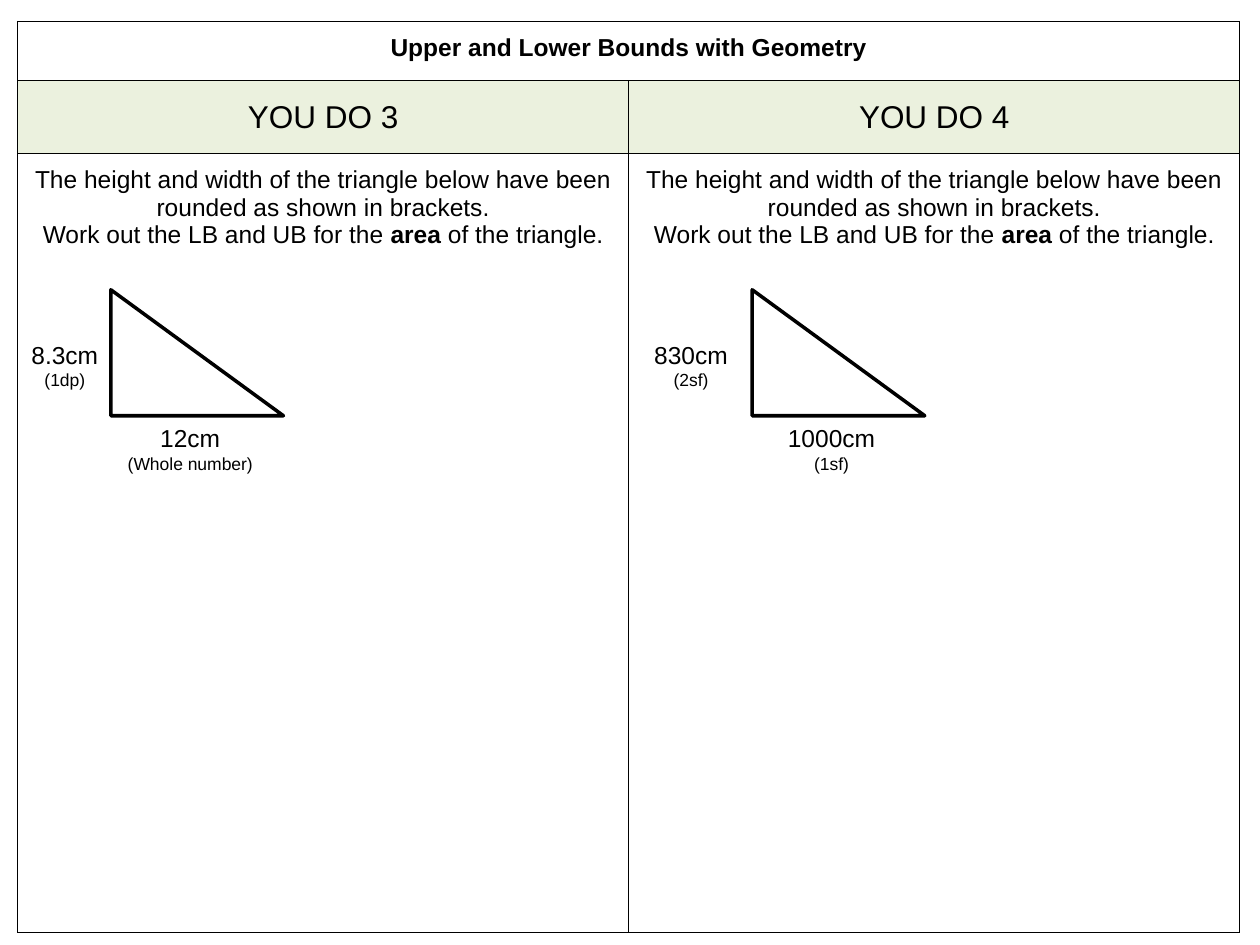
from lxml.etree import SubElement
from pptx import Presentation
from pptx.dml.color import RGBColor
from pptx.enum.shapes import MSO_SHAPE
from pptx.enum.text import MSO_ANCHOR, MSO_AUTO_SIZE, PP_ALIGN
from pptx.oxml.ns import qn
from pptx.util import Inches, Pt

# Content: a paragraph is a list of (text, bold) runs
TITLE = "Upper and Lower Bounds with Geometry"
QUESTION = [
    [("The height and width of the triangle below have been rounded as shown in brackets.", False)],
    [("Work out the LB and UB for the ", False), ("area", True), (" of the triangle.", False)],
]
# Each side is (length, rounding, label width); left is the triangle's position
TASKS = [
    {"heading": "YOU DO 3", "left": 0.88,
     "height": ("8.3cm", "(1dp)", 0.73), "base": ("12cm", "(Whole number)", 1.2)},
    {"heading": "YOU DO 4", "left": 5.97,
     "height": ("830cm", "(2sf)", 0.97), "base": ("1000cm", "(1sf)", 0.9)},
]

THEME = {
    "font": "Arial", "ink": "000000", "heading_fill": "EBF1DE",
    "heading": 18, "body": 14, "rounding": 10,
    "border": 0.75, "outline": 2,
}

# Layout in inches
TABLE_LEFT, TABLE_TOP, COLUMN_WIDTH = 0.14, 0.17, 4.85
ROW_HEIGHTS = [0.47, 0.58, 6.18]
CELL_MARGIN = 0.1
TRIANGLE_TOP, TRIANGLE_WIDTH, TRIANGLE_HEIGHT = 2.3, 1.37, 1
LABEL_HEIGHT, HEIGHT_LABEL_TOP, BASE_LABEL_TOP = 0.5, 2.65, 3.31
BASE_LABEL_CENTRE = 0.63  # from the triangle's left side


def write(frame, paragraphs, sizes):
    """Fill a text frame with centred paragraphs, one size for each."""
    for index, (runs, size) in enumerate(zip(paragraphs, sizes)):
        paragraph = frame.paragraphs[0] if index == 0 else frame.add_paragraph()
        paragraph.alignment = PP_ALIGN.CENTER
        for text, bold in runs:
            run = paragraph.add_run()
            run.text = text
            run.font.name = THEME["font"]
            run.font.size = Pt(size)
            run.font.bold = bold
            run.font.color.rgb = RGBColor.from_string(THEME["ink"])


def style_cell(cell, fill=None, anchor=MSO_ANCHOR.TOP):
    properties = cell._tc.get_or_add_tcPr()
    for edge in ("a:lnL", "a:lnR", "a:lnT", "a:lnB"):
        line = SubElement(properties, qn(edge), w=str(Pt(THEME["border"])))
        solid = SubElement(line, qn("a:solidFill"))
        SubElement(solid, qn("a:srgbClr"), val=THEME["ink"])
    if fill:
        cell.fill.solid()
        cell.fill.fore_color.rgb = RGBColor.from_string(fill)
    else:
        cell.fill.background()
    cell.vertical_anchor = anchor
    cell.margin_left = cell.margin_right = Inches(CELL_MARGIN)
    cell.margin_top = cell.margin_bottom = Inches(CELL_MARGIN)


def add_label(slide, side, left, top):
    length, rounding, width = side
    label = slide.shapes.add_textbox(
        Inches(left), Inches(top), Inches(width), Inches(LABEL_HEIGHT))
    label.text_frame.word_wrap = False
    label.text_frame.auto_size = MSO_AUTO_SIZE.SHAPE_TO_FIT_TEXT
    write(label.text_frame, [[(length, False)], [(rounding, False)]],
          sizes=[THEME["body"], THEME["rounding"]])


def add_triangle(slide, task):
    left = task["left"]
    triangle = slide.shapes.add_shape(
        MSO_SHAPE.RIGHT_TRIANGLE, Inches(left), Inches(TRIANGLE_TOP),
        Inches(TRIANGLE_WIDTH), Inches(TRIANGLE_HEIGHT))
    triangle.shadow.inherit = False
    triangle.fill.background()
    triangle.line.color.rgb = RGBColor.from_string(THEME["ink"])
    triangle.line.width = Pt(THEME["outline"])
    # The height label ends at the triangle; the base label is centred under it
    add_label(slide, task["height"], left - task["height"][2], HEIGHT_LABEL_TOP)
    add_label(slide, task["base"], left + BASE_LABEL_CENTRE - task["base"][2] / 2,
              BASE_LABEL_TOP)


def add_worksheet(slide):
    grid = slide.shapes.add_table(
        len(ROW_HEIGHTS), len(TASKS), Inches(TABLE_LEFT), Inches(TABLE_TOP),
        Inches(COLUMN_WIDTH * len(TASKS)), Inches(sum(ROW_HEIGHTS))).table
    grid.first_row = grid.horz_banding = False
    for row, height in zip(grid.rows, ROW_HEIGHTS):
        row.height = Inches(height)

    # Title row
    grid.cell(0, 0).merge(grid.cell(0, len(TASKS) - 1))
    write(grid.cell(0, 0).text_frame, [[(TITLE, True)]], sizes=[THEME["body"]])

    # One column for each task
    for column, task in enumerate(TASKS):
        grid.columns[column].width = Inches(COLUMN_WIDTH)
        title, heading, question = (grid.cell(row, column) for row in range(3))
        style_cell(title)
        style_cell(heading, fill=THEME["heading_fill"], anchor=MSO_ANCHOR.MIDDLE)
        style_cell(question)
        write(heading.text_frame, [[(task["heading"], False)]], sizes=[THEME["heading"]])
        write(question.text_frame, QUESTION, sizes=[THEME["body"]] * len(QUESTION))


def main():
    deck = Presentation()
    deck.slide_width, deck.slide_height = Inches(10), Inches(7.5)
    slide = deck.slides.add_slide(deck.slide_layouts[6])
    add_worksheet(slide)
    for task in TASKS:
        add_triangle(slide, task)
    deck.save("out.pptx")


if __name__ == "__main__":
    main()
